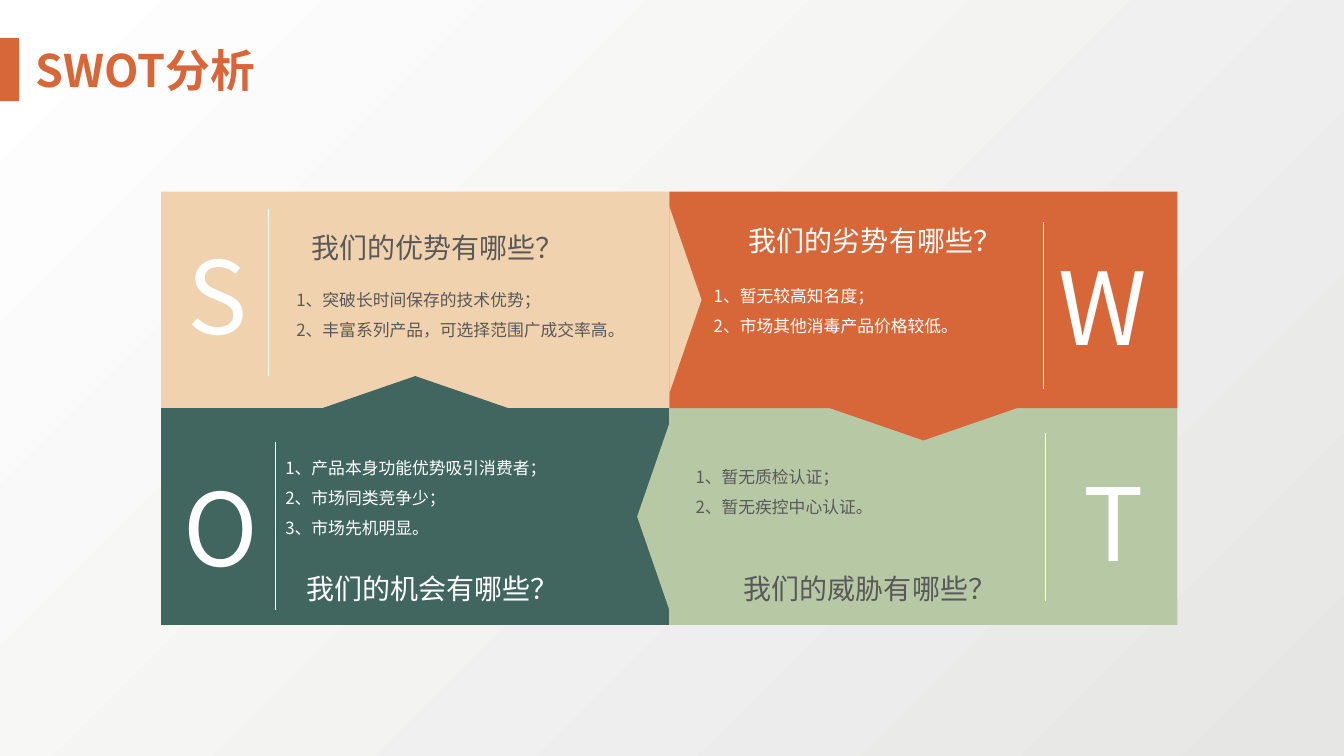
"""Build a SWOT analysis slide with four interlocking quadrants."""
from lxml.etree import SubElement
from pptx import Presentation
from pptx.dml.color import RGBColor
from pptx.enum.shapes import MSO_CONNECTOR, MSO_SHAPE
from pptx.enum.text import MSO_ANCHOR, MSO_AUTO_SIZE, PP_ALIGN
from pptx.oxml.ns import qn
from pptx.util import Pt

COLORS = {
    "sand": "F0D2AF", "orange": "D76739", "teal": "416660", "sage": "B7C8A5",
    "white": "FFFFFF", "gray": "595959", "mist": "E6E6E5",
}
FONT = "Noto Sans CJK SC"
TITLE = "SWOT分析"

QUADRANTS = [
    {"letter": "S", "fill": "sand", "ink": "gray", "cell": (0, 0), "arrow": (1, 0, 90),
     "letter_at": (106.5, 163.5), "align": PP_ALIGN.CENTER, "divider_at": (191.5, 149),
     "heading": "我们的优势有哪些？", "heading_at": (215.3, 149),
     "points": ["1、突破长时间保存的技术优势；", "2、丰富系列产品，可选择范围广成交率高。"],
     "points_box": (204.5, 195.8, 255, 48)},
    {"letter": "T", "fill": "sage", "ink": "gray", "cell": (1, 1), "arrow": (-1, 0, 270),
     "letter_at": (746.6, 325.5), "align": PP_ALIGN.CENTER, "divider_at": (746.6, 309.6),
     "heading": "我们的威胁有哪些？", "heading_at": (524.2, 392.4),
     "points": ["1、暂无质检认证；", "2、暂无疾控中心认证。"],
     "points_box": (489.6, 322.6, 240, 51)},
    {"letter": "W", "fill": "orange", "ink": "white", "cell": (1, 0), "arrow": (0, 1, 180),
     "letter_at": (748.8, 171.4), "align": PP_ALIGN.LEFT, "divider_at": (745.2, 158.4),
     "heading": "我们的劣势有哪些？", "heading_at": (527.8, 144),
     "points": ["1、暂无较高知名度；", "2、市场其他消毒产品价格较低。"],
     "points_box": (502.6, 193, 253, 51)},
    {"letter": "O", "fill": "teal", "ink": "white", "cell": (0, 1), "arrow": (0, -1, 0),
     "letter_at": (109.4, 329), "align": PP_ALIGN.CENTER, "divider_at": (196.6, 316),
     "heading": "我们的机会有哪些？", "heading_at": (211.7, 392.4),
     "points": ["1、产品本身功能优势吸引消费者；", "2、市场同类竞争少；", "3、市场先机明显。"],
     "points_box": (196.6, 316, 260, 73)},
]

GRID_LEFT, GRID_TOP = 115.2, 136.8
CELL_WIDTH, CELL_HEIGHT = 362.9, 154.8
ARROW_BASE, ARROW_HEIGHT = 133.2, 23
DIVIDER_HEIGHT = 119.5

FRAME_FORMAT = {"word_wrap": True, "auto_size": MSO_AUTO_SIZE.NONE,
                "vertical_anchor": MSO_ANCHOR.TOP}
TITLE_STYLE = {"size": 32, "bold": True, "spacing": 1, "align": PP_ALIGN.CENTER}
LETTER_STYLE = {"size": 72, "bold": False, "spacing": 1}
HEADING_STYLE = {"size": 20, "bold": False, "spacing": 1.5, "align": PP_ALIGN.LEFT}
POINTS_STYLE = {"size": 12, "bold": False, "spacing": 1.5, "align": PP_ALIGN.LEFT}


def rgb(name):
    return RGBColor.from_string(COLORS[name])


def set_attributes(target, values):
    for name, value in values.items():
        setattr(target, name, value)


def place(shape, box):
    names = ("left", "top", "width", "height")
    set_attributes(shape, dict(zip(names, map(Pt, box))))


def add_filled(slide, kind, box, color, rotation=0):
    shape = slide.shapes.add_shape(kind, *map(Pt, box))
    shape.rotation = rotation
    shape.shadow.inherit = False
    shape.fill.solid()
    shape.fill.fore_color.rgb = rgb(color)
    shape.line.fill.background()


def write(shape, lines, color, size, bold, spacing, align):
    frame = shape.text_frame
    set_attributes(frame, FRAME_FORMAT)
    frame.text = "\n".join(lines)
    for paragraph in frame.paragraphs:
        set_attributes(paragraph, {"alignment": align, "line_spacing": spacing,
                                   "space_before": Pt(0)})
        run = paragraph.runs[0]
        set_attributes(run.font, {"name": FONT, "size": Pt(size), "bold": bold})
        run.font.color.rgb = rgb(color)
        SubElement(run.font._element, qn("a:ea")).set("typeface", FONT)


def add_text(slide, text, box, color, style):
    write(slide.shapes.add_textbox(*map(Pt, box)), [text], color, **style)


def fill_placeholder(placeholder, lines, box, color, style):
    placeholder.element.getparent().append(placeholder.element)
    place(placeholder, box)
    write(placeholder, lines, color, **style)
    for paragraph in placeholder.text_frame.paragraphs:
        properties = paragraph._p.get_or_add_pPr()
        properties.set("marL", "0")
        properties.set("indent", "0")
        SubElement(properties, qn("a:buNone"))


def add_divider(slide, left, top):
    ends = map(Pt, (left, top, left, top + DIVIDER_HEIGHT))
    divider = slide.shapes.add_connector(MSO_CONNECTOR.STRAIGHT, *ends)
    divider.line.color.rgb = rgb("white")
    divider.line.width = Pt(0.5)
    SubElement(divider.element.spPr, qn("a:effectLst"))


def cell_origin(quadrant):
    column, row = quadrant["cell"]
    return GRID_LEFT + column * CELL_WIDTH, GRID_TOP + row * CELL_HEIGHT


def add_arrow(slide, quadrant):
    left, top = cell_origin(quadrant)
    across, down, rotation = quadrant["arrow"]
    center_x = left + CELL_WIDTH / 2 + across * (CELL_WIDTH + ARROW_HEIGHT) / 2
    center_y = top + CELL_HEIGHT / 2 + down * (CELL_HEIGHT + ARROW_HEIGHT) / 2
    box = (center_x - ARROW_BASE / 2, center_y - ARROW_HEIGHT / 2, ARROW_BASE, ARROW_HEIGHT)
    add_filled(slide, MSO_SHAPE.ISOSCELES_TRIANGLE, box, quadrant["fill"], rotation)


def set_background(slide):
    fill = slide.background.fill
    fill.gradient()
    fill.gradient_angle = 135
    for stop, color in zip(fill.gradient_stops, ("mist", "white")):
        stop.color.rgb = rgb(color)


def main():
    presentation = Presentation()
    set_attributes(presentation, {"slide_width": Pt(960), "slide_height": Pt(540)})
    slide = presentation.slides.add_slide(presentation.slide_layouts.get_by_name("Comparison"))
    title, *bodies = list(slide.placeholders)
    set_background(slide)

    add_filled(slide, MSO_SHAPE.RECTANGLE, (0, 27.2, 13.7, 45), "orange")
    fill_placeholder(title, [TITLE], (1.4, 26.6, 204.5, 46), "orange", TITLE_STYLE)

    for quadrant in QUADRANTS:
        box = (*cell_origin(quadrant), CELL_WIDTH, CELL_HEIGHT)
        add_filled(slide, MSO_SHAPE.RECTANGLE, box, quadrant["fill"])
    for quadrant in QUADRANTS:
        add_arrow(slide, quadrant)
    for quadrant, body in zip(QUADRANTS, bodies):
        letter_style = {**LETTER_STYLE, "align": quadrant["align"]}
        add_text(slide, quadrant["letter"], (*quadrant["letter_at"], 97.2, 94.3),
                 "white", letter_style)
        add_text(slide, quadrant["heading"], (*quadrant["heading_at"], 200, 44),
                 quadrant["ink"], HEADING_STYLE)
        fill_placeholder(body, quadrant["points"], quadrant["points_box"],
                         quadrant["ink"], POINTS_STYLE)
        add_divider(slide, *quadrant["divider_at"])

    presentation.save("out.pptx")


if __name__ == "__main__":
    main()
